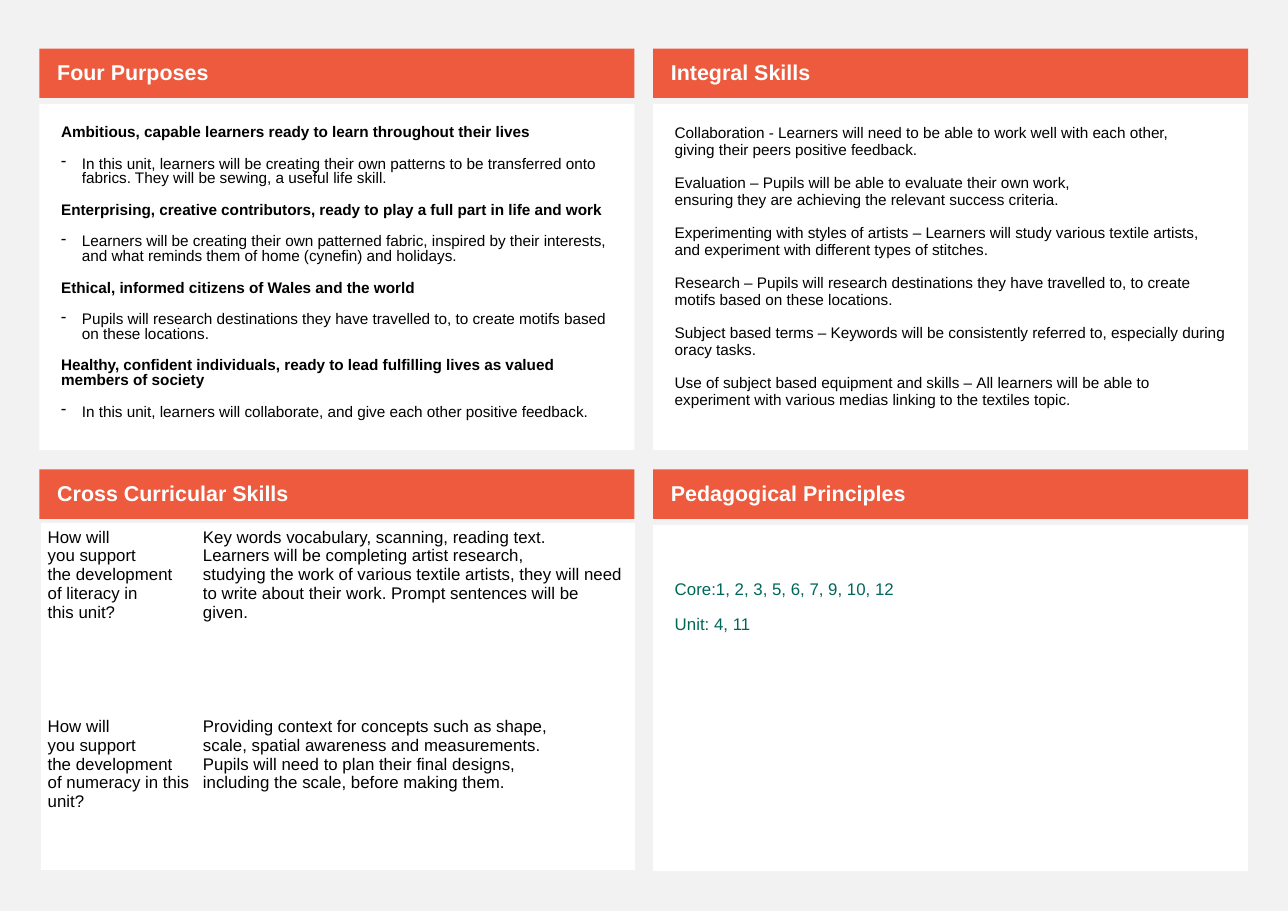
from lxml.etree import SubElement
from pptx import Presentation
from pptx.dml.color import RGBColor
from pptx.enum.shapes import MSO_SHAPE
from pptx.enum.text import MSO_ANCHOR, PP_ALIGN
from pptx.oxml.ns import qn
from pptx.util import Cm, Pt

GREY = RGBColor(0xF2, 0xF2, 0xF2)
RED = RGBColor(0xED, 0x5A, 0x3E)
WHITE = RGBColor(0xFF, 0xFF, 0xFF)
BLACK = RGBColor(0x00, 0x00, 0x00)
GREEN = RGBColor(0x00, 0x67, 0x58)
FONT = "Arial"
TIE = "~"

TITLES = [
    ["Four Purposes", "Integral Skills"],
    ["Cross Curricular Skills", "Pedagogical Principles"],
]
AIMS = [
    ("Ambitious, capable learners ready to learn throughout their lives",
     "In this unit,~learners~will be creating their own~patterns to~be transferred onto fabrics. They will be sewing, a~useful life skill."),
    ("Enterprising, creative contributors, ready to play a full part in life and work",
     "Learners will~be creating~their own patterned~fabric, inspired by their interests, and what reminds them of~home (cynefin) and~holidays."),
    ("Ethical, informed citizens of Wales and the world",
     "Pupils will~research destinations they have travelled to, to create motifs based on these locations."),
    ("Healthy, confident individuals, ready to lead fulfilling lives as valued members of society",
     "In this unit, learners will collaborate, and give each other positive feedback."),
]
SKILLS = [
    "Collaboration -~Learners will~need~to be able to work~well with each other, giving~their peers~positive feedback.",
    "Evaluation – Pupils~will be able to evaluate their own~work, ensuring~they~are~achieving the~relevant success~criteria.",
    "Experimenting with~styles~of artists –~Learners will study various textile artists, and experiment with~different types of stitches.",
    "Research –~Pupils will~research destinations they have travelled to, to create motifs based on these locations.",
    "Subject based terms –~Keywords~will be consistently referred to,~especially during oracy tasks.",
    "Use of subject based~equipment~and skills –~All learners will~be able to experiment with~various medias~linking to the textiles topic.",
]
CODES = ["Core:1, 2, 3, 5, 6, 7, 9, 10, 12", "Unit: 4, 11"]
CROSS = [
    (["How will you~support the~development of~literacy in this~unit?"],
     ["Key words vocabulary, scanning, reading text.",
      "Learners will be completing artist research, studying~the~work of~various textile artists, they will need to~write about~their work. Prompt~sentences will be given."]),
    (["How will you~support the~development of~numeracy in~this unit?"],
     ["Providing context for concepts such as shape, scale,~spatial awareness and measurements.",
      "Pupils will need to~plan their final~designs, including~the~scale,~before~making them."]),
]

LEFTS = [0.91, 15.06]
TOPS = [1.12, 10.82]
WIDE = 13.72
HEAD = 1.14
DROP = 1.28
BODY = 7.98
COLS = [3.58, 10.08]
ROWS = [4.37, 3.61]


def inset(frame, left, top, right, low):
    frame.margin_left, frame.margin_top = Cm(left), Cm(top)
    frame.margin_right, frame.margin_bottom = Cm(right), Cm(low)


def panel(slide, left, top, high, fill):
    box = slide.shapes.add_shape(
        MSO_SHAPE.RECTANGLE, Cm(left), Cm(top), Cm(WIDE), Cm(high))
    box.shadow.inherit = False
    box.fill.solid()
    box.fill.fore_color.rgb = fill
    box.line.fill.background()
    box.text_frame.word_wrap = True
    box.text_frame.vertical_anchor = MSO_ANCHOR.TOP
    return box.text_frame


def write(frame, lines, size, color, space=None, gap=0):
    frame.text = "\n".join(lines).replace(TIE, chr(160))
    for para in frame.paragraphs:
        para.alignment = PP_ALIGN.LEFT
        para.space_before = Pt(gap)
        para.line_spacing = space
        for run in para.runs:
            run.font.name = FONT
            run.font.size = Pt(size)
            run.font.color.rgb = color


def dash(para):
    props = para._p.get_or_add_pPr()
    props.set("marL", str(Cm(0.48)))
    props.set("indent", str(Cm(-0.48)))
    SubElement(props, qn("a:buChar"), char="-")


def main():
    deck = Presentation()
    deck.slide_width, deck.slide_height = Cm(29.7), Cm(21)
    slide = deck.slides.add_slide(deck.slide_layouts[6])
    slide.background.fill.solid()
    slide.background.fill.fore_color.rgb = GREY

    for top, names in zip(TOPS, TITLES):
        for left, name in zip(LEFTS, names):
            frame = panel(slide, left, top, HEAD, RED)
            inset(frame, 0.41, 0.13, 0.25, 0.13)
            frame.vertical_anchor = MSO_ANCHOR.MIDDLE
            write(frame, [name], 14, WHITE, 0.9, 11)
            frame.paragraphs[0].runs[0].font.bold = True

    frame = panel(slide, LEFTS[0], TOPS[0] + DROP, BODY, WHITE)
    inset(frame, 0.5, 0.5, 0.5, 0.5)
    write(frame, [line for pair in AIMS for line in pair], 10, BLACK, 0.8, 11)
    for head, note in zip(frame.paragraphs[::2], frame.paragraphs[1::2]):
        head.runs[0].font.bold = True
        dash(note)

    frame = panel(slide, LEFTS[1], TOPS[0] + DROP, BODY, WHITE)
    inset(frame, 0.5, 0.5, 0.5, 0.5)
    write(frame, SKILLS, 10, BLACK, 0.9, 11)

    frame = panel(slide, LEFTS[1], TOPS[1] + DROP, BODY, WHITE)
    inset(frame, 0.5, 1.3, 0.5, 0.5)
    write(frame, CODES, 11, GREEN, 0.9, 11)

    table = slide.shapes.add_table(
        len(ROWS), len(COLS), Cm(0.97), Cm(12.07),
        Cm(sum(COLS)), Cm(sum(ROWS))).table
    table.first_row = table.horz_banding = False
    for col, wide in zip(table.columns, COLS):
        col.width = Cm(wide)
    for row, high, texts in zip(table.rows, ROWS, CROSS):
        row.height = Cm(high)
        for cell, lines in zip(row.cells, texts):
            cell.fill.solid()
            cell.fill.fore_color.rgb = WHITE
            inset(cell, 0.13, 0.1, 0.13, 0.1)
            write(cell.text_frame, lines, 11, BLACK)

    deck.save("out.pptx")


if __name__ == "__main__":
    main()
